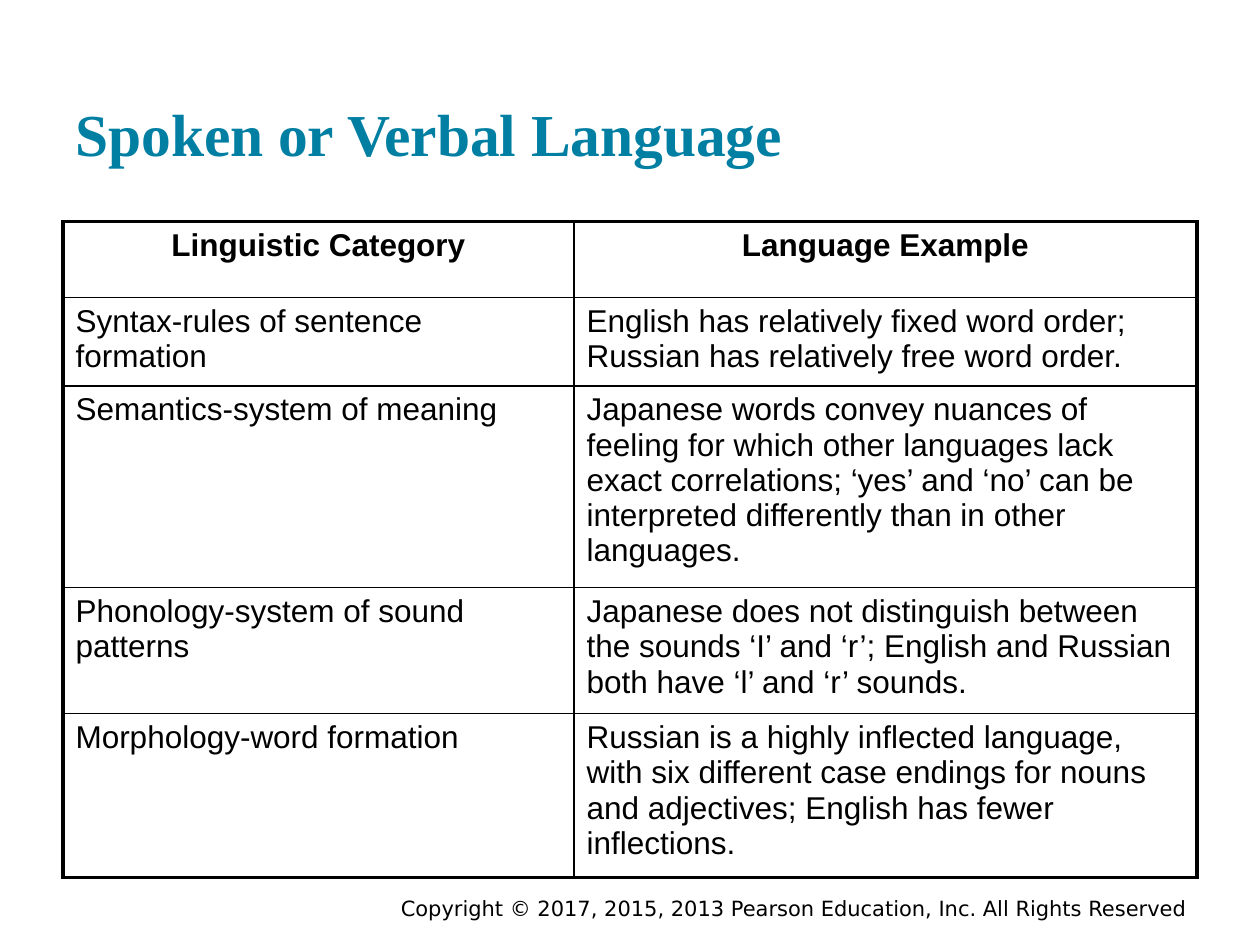
import pptx
import pptx.dml.color
import pptx.enum.text
import pptx.oxml.ns
import pptx.util
from lxml import etree

Pt = pptx.util.Pt
ALIGN = pptx.enum.text.PP_ALIGN
ANCHOR = pptx.enum.text.MSO_ANCHOR
BLACK = "000000"


def set_text(text_frame, text, font_name, size, color, bold=False, alignment=ALIGN.LEFT):
    text_frame.text = text
    text_frame.word_wrap = True
    paragraph = text_frame.paragraphs[0]
    paragraph.alignment = alignment
    font = paragraph.runs[0].font
    font.name = font_name
    font.size = Pt(size)
    font.bold = bold
    font.color.rgb = pptx.dml.color.RGBColor.from_string(color)


def add_border(cell, side, width):
    qn = pptx.oxml.ns.qn
    properties = cell._tc.get_or_add_tcPr()
    line = etree.SubElement(properties, qn("a:ln" + side), w=str(int(Pt(width))))
    fill = etree.SubElement(line, qn("a:solidFill"))
    etree.SubElement(fill, qn("a:srgbClr"), val=BLACK)


presentation = pptx.Presentation()
presentation.slide_width = Pt(720)
presentation.slide_height = Pt(540)
slide = presentation.slides.add_slide(presentation.slide_layouts[6])

# Copyright line
copyright_box = slide.shapes.add_textbox(Pt(121.7), Pt(508.3), Pt(563.8), Pt(21.6))
set_text(copyright_box.text_frame,
         "Copyright © 2017, 2015, 2013 Pearson Education, Inc. All Rights Reserved",
         "DejaVu Sans", 12, BLACK, alignment=ALIGN.RIGHT)

# Title
title_box = slide.shapes.add_textbox(Pt(36), Pt(17.3), Pt(648), Pt(86.4))
set_text(title_box.text_frame, "Spoken or Verbal Language",
         "Times New Roman", 34, "007FA3", bold=True)
title_box.text_frame.vertical_anchor = ANCHOR.BOTTOM
title_box.text_frame.margin_top = title_box.text_frame.margin_bottom = Pt(7.2)

# Table of linguistic categories
rows = [
    ("Linguistic Category", "Language Example"),
    ("Syntax-rules of sentence formation",
     "English has relatively fixed word order; Russian has relatively free word order."),
    ("Semantics-system of meaning",
     "Japanese words convey nuances of feeling for which other languages lack exact "
     "correlations; ‘yes’ and ‘no’ can be interpreted differently than in other languages."),
    ("Phonology-system of sound patterns",
     "Japanese does not distinguish between the sounds ‘I’ and ‘r’; "
     "English and Russian both have ‘l’ and ‘r’ sounds."),
    ("Morphology-word formation",
     "Russian is a highly inflected language, with six different case endings for nouns "
     "and adjectives; English has fewer inflections."),
]
column_widths = [292, 356]
row_heights = [43.4, 47.4, 108, 67.4, 88]

table = slide.shapes.add_table(len(rows), len(column_widths), Pt(36), Pt(126.7),
                               Pt(sum(column_widths)), Pt(sum(row_heights))).table
table.first_row = False
table.horz_banding = False
for column, width in zip(table.columns, column_widths):
    column.width = Pt(width)
for table_row, height in zip(table.rows, row_heights):
    table_row.height = Pt(height)

last_row, last_column = len(rows) - 1, len(column_widths) - 1
for row_index, row in enumerate(rows):
    is_header = row_index == 0
    for column_index, text in enumerate(row):
        cell = table.cell(row_index, column_index)
        set_text(cell.text_frame, text, "Arial", 18, BLACK, bold=is_header,
                 alignment=ALIGN.CENTER if is_header else ALIGN.LEFT)
        # Thick outer frame, thin inner lines
        outer_sides = {"L": column_index == 0, "R": column_index == last_column,
                       "T": row_index == 0, "B": row_index == last_row}
        for side, is_outer in outer_sides.items():
            add_border(cell, side, 2.25 if is_outer else 1)
        cell.fill.background()

presentation.save("out.pptx")
